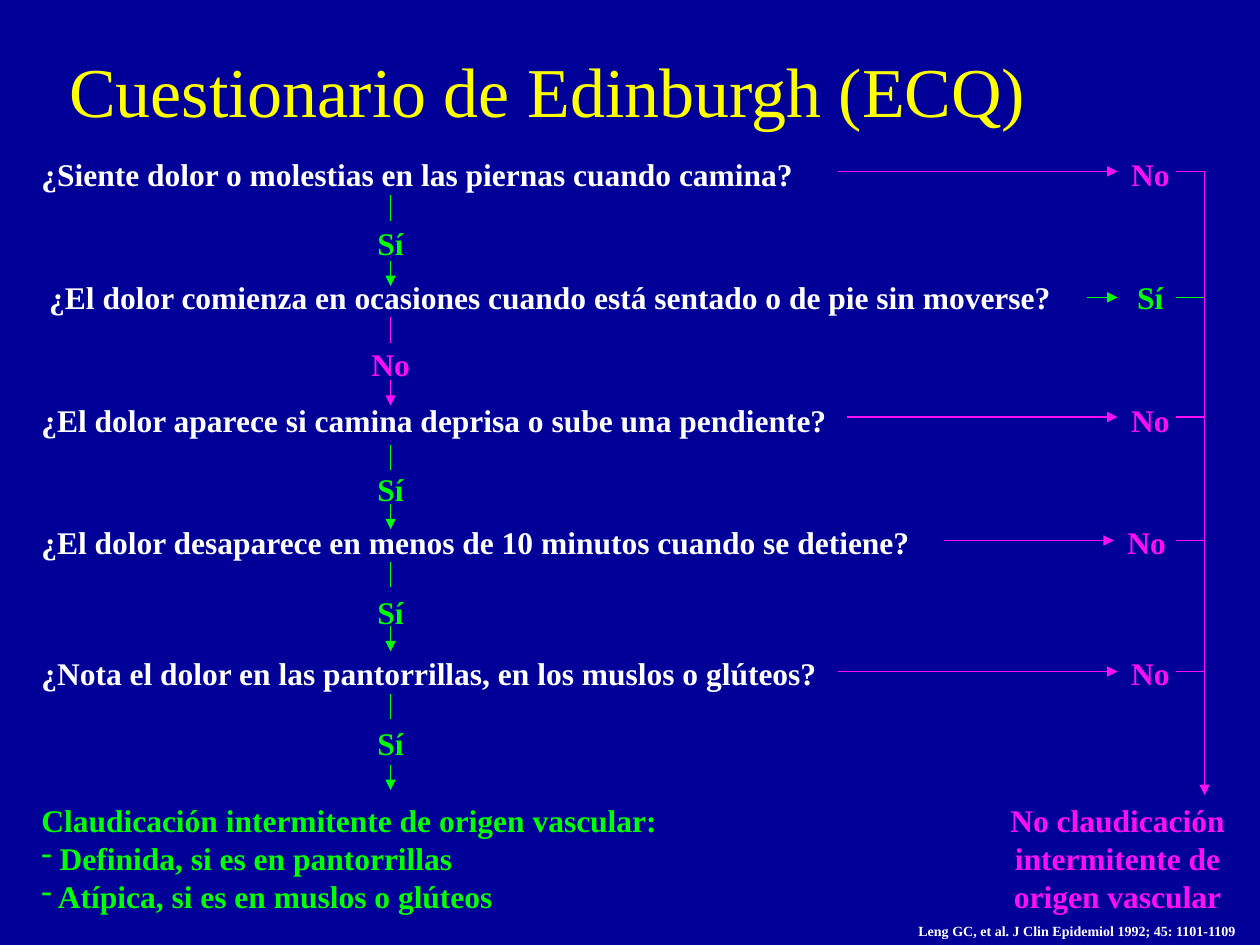
from dataclasses import dataclass

from lxml.etree import SubElement
from pptx import Presentation
from pptx.dml.color import RGBColor
from pptx.enum.shapes import MSO_CONNECTOR
from pptx.enum.text import MSO_ANCHOR, PP_ALIGN
from pptx.oxml.ns import qn
from pptx.util import Inches, Pt


@dataclass(frozen=True)
class Theme:
    font: str = "Times New Roman"
    background: str = "000099"
    title: str = "FFFF00"
    question: str = "FFFFFF"
    yes: str = "00FF00"
    no: str = "FF0DF4"
    title_size: int = 40
    body_size: int = 18
    source_size: int = 8
    line_width: float = 0.75


THEME = Theme()
ANSWER_COLORS = {"Sí": THEME.yes, "No": THEME.no}

# Content
TITLE = "Cuestionario de Edinburgh (ECQ)"
SOURCE = "Leng GC, et al. J Clin Epidemiol 1992; 45: 1101-1109"
DIAGNOSIS = [
    "Claudicación intermitente de origen vascular:",
    " Definida, si es en pantorrillas",
    " Atípica, si es en muslos o glúteos",
]
EXCLUSION = ["No claudicación intermitente de origen vascular"]

# Question, top, width; exit answer, its centre, exit line start and height;
# answer that continues, its top, tops of the lines above and below it
QUESTIONS = [
    ("¿Siente dolor o molestias en las piernas cuando camina?",
     1.18, 6.42, "No", 9.13, 6.65, 1.36, "Sí", 1.73, 1.55, 2.07),
    (" ¿El dolor comienza en ocasiones cuando está sentado o de pie sin moverse?",
     2.16, 8.35, "Sí", 9.13, 8.63, 2.36, "No", 2.69, 2.52, 3.02),
    ("¿El dolor aparece si camina deprisa o sube una pendiente?",
     3.13, 6.96, "No", 9.13, 6.72, 3.31, "Sí", 3.68, 3.53, 4.0),
    ("¿El dolor desaparece en menos de 10 minutos cuando se detiene?",
     4.1, 7.64, "No", 9.1, 7.49, 4.29, "Sí", 4.66, 4.46, 4.97),
    ("¿Nota el dolor en las pantorrillas, en los muslos o glúteos?",
     5.14, 6.49, "No", 9.13, 6.65, 5.33, "Sí", 5.7, 5.51, 6.07),
]

# Layout
LEFT = 0.23
ROW_HEIGHT = 0.4
ANSWER_WIDTH = 0.64
FLOW_X = 3.1
STEP_LENGTH = 0.2
ARROW_GAP = 0.26
STUB_X, TRUNK_X = 9.33, 9.56
RESULT_TOP = 6.31


def style(paragraph, color, size=THEME.body_size, bold=True):
    font = paragraph.font
    font.name, font.size, font.bold = THEME.font, Pt(size), bold
    font.color.rgb = RGBColor.from_string(color)


def add_dash(paragraph):
    properties = paragraph._p.get_or_add_pPr()
    properties.set("marL", "0")
    properties.set("indent", "0")
    SubElement(properties, qn("a:buChar")).set("char", "-")


def add_text(slide, lines, left, top, width, height, color,
             size=THEME.body_size, align=PP_ALIGN.LEFT):
    box = slide.shapes.add_textbox(
        Inches(left), Inches(top), Inches(width), Inches(height))
    frame = box.text_frame
    frame.word_wrap = True
    for index, line in enumerate(lines):
        paragraph = frame.add_paragraph() if index else frame.paragraphs[0]
        paragraph.text = line
        paragraph.alignment = align
        if index:
            add_dash(paragraph)
        style(paragraph, color, size)


def add_answer(slide, answer, center, top):
    add_text(slide, [answer], center - ANSWER_WIDTH / 2, top, ANSWER_WIDTH,
             ROW_HEIGHT, ANSWER_COLORS[answer], align=PP_ALIGN.CENTER)


def add_line(slide, x1, y1, x2, y2, color, arrow=False):
    connector = slide.shapes.add_connector(
        MSO_CONNECTOR.STRAIGHT, Inches(x1), Inches(y1), Inches(x2), Inches(y2))
    connector.line.color.rgb = RGBColor.from_string(color)
    connector.line.width = Pt(THEME.line_width)
    if arrow:
        SubElement(connector.line._get_or_add_ln(), qn("a:tailEnd")).set("type", "triangle")
    SubElement(connector._element.spPr, qn("a:effectLst"))


def add_title(slide):
    title = slide.shapes.title
    title.left, title.top = Inches(0.45), Inches(0.41)
    title.width, title.height = Inches(9), Inches(0.6)
    title.text_frame.text = TITLE
    title.text_frame.vertical_anchor = MSO_ANCHOR.MIDDLE
    paragraph = title.text_frame.paragraphs[0]
    paragraph.alignment = PP_ALIGN.LEFT
    style(paragraph, THEME.title, THEME.title_size, bold=False)


def add_question(slide, question, top, width, exit_answer, exit_center,
                 exit_x, exit_y, answer, answer_top, line_top, arrow_top):
    add_text(slide, [question], LEFT, top, width, ROW_HEIGHT, THEME.question)

    # Way out to the right
    exit_color = ANSWER_COLORS[exit_answer]
    add_answer(slide, exit_answer, exit_center, top)
    add_line(slide, exit_x, exit_y, exit_center - ARROW_GAP, exit_y, exit_color, arrow=True)
    add_line(slide, STUB_X, exit_y, TRUNK_X, exit_y, exit_color)

    # Way down to the next step
    color = ANSWER_COLORS[answer]
    add_answer(slide, answer, FLOW_X, answer_top)
    for start, arrow in ((line_top, False), (arrow_top, True)):
        add_line(slide, FLOW_X, start, FLOW_X, start + STEP_LENGTH, color, arrow)


def main():
    prs = Presentation()
    prs.slide_width, prs.slide_height = Inches(10), Inches(7.5)
    slide = prs.slides.add_slide(prs.slide_layouts[5])
    slide.background.fill.solid()
    slide.background.fill.fore_color.rgb = RGBColor.from_string(THEME.background)

    add_title(slide)
    for question in QUESTIONS:
        add_question(slide, *question)

    # Results and the trunk that collects the exits
    first_exit_y = QUESTIONS[0][6]
    add_line(slide, TRUNK_X, first_exit_y, TRUNK_X, RESULT_TOP, THEME.no, arrow=True)
    add_text(slide, DIAGNOSIS, LEFT, RESULT_TOP, 5.98, 1, THEME.yes)
    add_text(slide, EXCLUSION, 7.87, RESULT_TOP, 2, 1, THEME.no, align=PP_ALIGN.CENTER)

    # Source
    add_text(slide, [SOURCE], 7.19, 7.27, 2.78, 0.23, THEME.question, THEME.source_size)

    prs.save("out.pptx")


if __name__ == "__main__":
    main()
